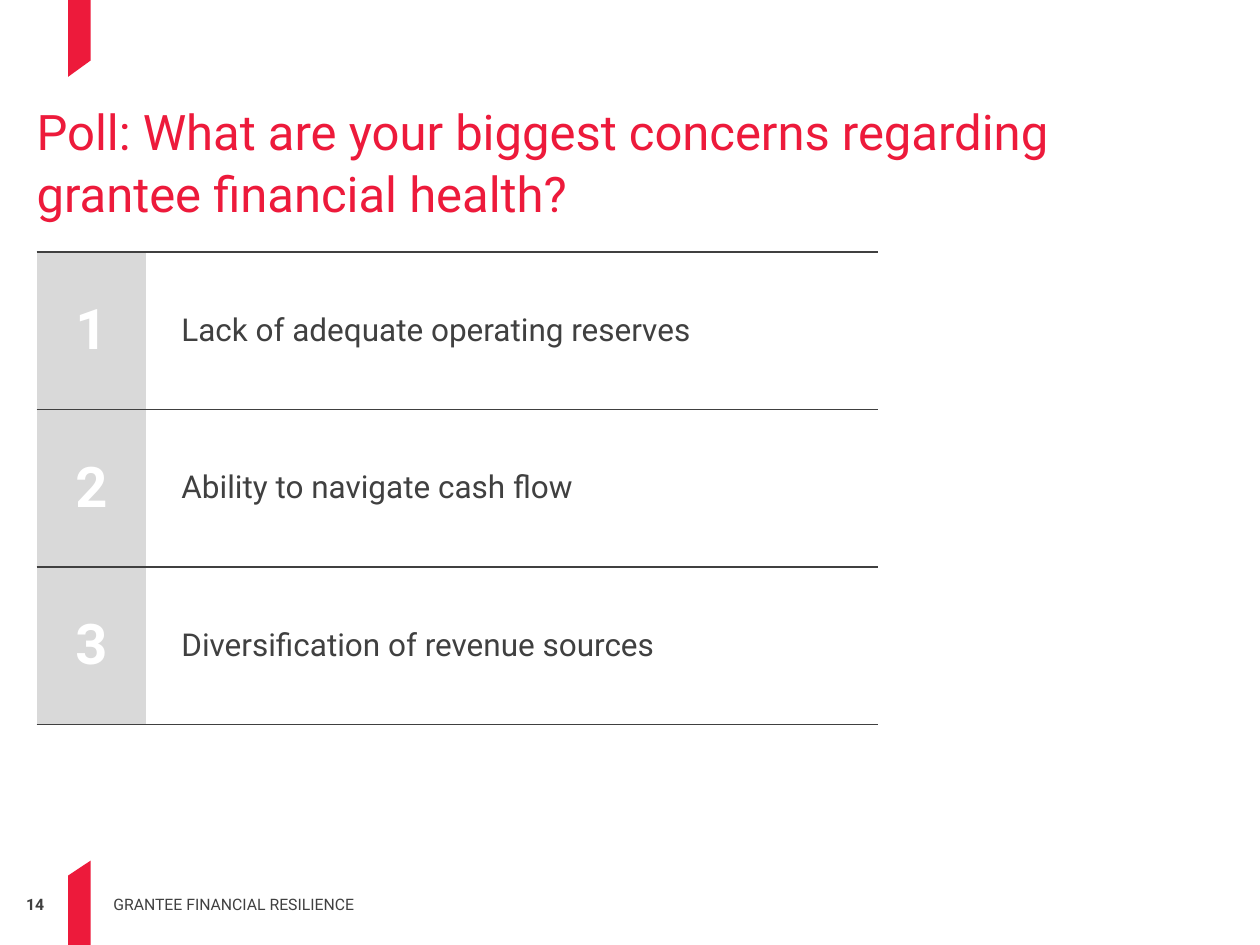
from lxml import etree
from pptx import Presentation
from pptx.dml.color import RGBColor
from pptx.enum.text import MSO_ANCHOR, MSO_AUTO_SIZE, PP_ALIGN
from pptx.oxml.ns import qn
from pptx.util import Pt

PX = 9144
LEFT, CENTER, RIGHT = PP_ALIGN.LEFT, PP_ALIGN.CENTER, PP_ALIGN.RIGHT
TOP, MIDDLE, BOTTOM = MSO_ANCHOR.TOP, MSO_ANCHOR.MIDDLE, MSO_ANCHOR.BOTTOM
NO_AUTOFIT = MSO_AUTO_SIZE.NONE
COLORS = {"accent": "ED1A3B", "text": "404040", "band": "D9D9D9", "white": "FFFFFF"}
FORMATS = {
    "title": {"size": Pt(28), "bold": False, "color": "accent"},
    "number": {"size": Pt(32), "bold": True, "color": "white"},
    "concern": {"size": Pt(18), "bold": False, "color": "text"},
    "page": {"size": Pt(9), "bold": True, "color": "text"},
    "footer": {"size": Pt(9), "bold": False, "color": "text"},
}
CONCERNS = [
    "Lack of adequate operating reserves",
    "Ability to navigate cash flow",
    "Diversification of revenue sources",
]


class PollSlide:
    """Holds the style and the current slide, and draws each kind of element."""

    def __init__(self, slide, font="Roboto"):
        self.slide = slide
        self.font = font

    def color(self, name):
        return RGBColor.from_string(COLORS[name])

    def put_text(self, frame, words, style, align=LEFT):
        paragraph = frame.paragraphs[0]
        paragraph.alignment = align
        run = paragraph.add_run()
        run.text = words
        for name, value in {"name": self.font, **FORMATS[style]}.items():
            if name == "color":
                run.font.color.rgb = self.color(value)
            else:
                setattr(run.font, name, value)
        return paragraph

    def frame(self, shape, anchor):
        settings = {"word_wrap": True, "auto_size": NO_AUTOFIT, "vertical_anchor": anchor}
        settings.update({f"margin_{side}": 0 for side in ("left", "top", "right", "bottom")})
        for name, value in settings.items():
            setattr(shape.text_frame, name, value)
        return shape.text_frame

    def title(self, box, words):
        heading = self.slide.shapes.title
        for name, value in zip(("left", "top", "width", "height"), box):
            setattr(heading, name, value * PX)
        self.put_text(self.frame(heading, MIDDLE), words, "title").line_spacing = 1.05

    def label(self, box, words, style, align=LEFT, anchor=TOP):
        shape = self.slide.shapes.add_textbox(*(value * PX for value in box))
        self.put_text(self.frame(shape, anchor), words, style, align)

    def ribbon(self, points):
        builder = self.slide.shapes.build_freeform(*points[0], scale=PX)
        builder.add_line_segments(points[1:], close=True)
        shape = builder.convert_to_shape()
        shape.shadow.inherit = False
        shape.fill.solid()
        shape.fill.fore_color.rgb = self.color("accent")
        shape.line.fill.background()

    def rule_cell(self, cell):
        properties = cell._tc.get_or_add_tcPr()
        for side in "LRTB":
            border = etree.SubElement(properties, qn(f"a:ln{side}"), w=str(Pt(1)))
            if side in "LR":
                etree.SubElement(border, qn("a:noFill"))
            else:
                fill = etree.SubElement(border, qn("a:solidFill"))
                etree.SubElement(fill, qn("a:srgbClr"), val=COLORS["text"])

    def cell(self, cell, words, style, align, inset):
        self.rule_cell(cell)
        margins = {"left": inset, "right": 14, "top": 5, "bottom": 5}
        for side, value in margins.items():
            setattr(cell, f"margin_{side}", value * PX)
        cell.vertical_anchor = MIDDLE
        self.put_text(cell.text_frame, words, style, align)

    def numbered_table(self, left, top, widths, row_height, entries):
        table = self.slide.shapes.add_table(
            len(entries), len(widths), left * PX, top * PX,
            sum(widths) * PX, row_height * len(entries) * PX).table
        table.first_row = table.horz_banding = False
        for column, width in zip(table.columns, widths):
            column.width = width * PX
        for index, entry in enumerate(entries):
            number, concern = table.rows[index].cells
            self.cell(number, str(index + 1), "number", CENTER, 14)
            number.fill.solid()
            number.fill.fore_color.rgb = self.color("band")
            self.cell(concern, entry, "concern", LEFT, 28)
            concern.fill.background()


def main():
    deck = Presentation()
    deck.slide_width, deck.slide_height = 1000 * PX, 750 * PX
    poll = PollSlide(deck.slides.add_slide(deck.slide_layouts[5]))
    poll.ribbon([(72, 48), (72, 0), (54, 0), (54, 61)])
    poll.ribbon([(54, 695), (54, 750), (72, 750), (72, 683)])
    poll.label((0, 710, 35, 15), "14", "page", RIGHT)
    poll.title((29, 75, 942, 105),
               "Poll: What are your biggest concerns regarding grantee financial health?")
    poll.numbered_table(29, 200, (87, 581), 125, CONCERNS)
    poll.label((90, 695, 347, 30), "GRANTEE FINANCIAL RESILIENCE", "footer", anchor=BOTTOM)
    deck.save("out.pptx")


if __name__ == "__main__":
    main()
